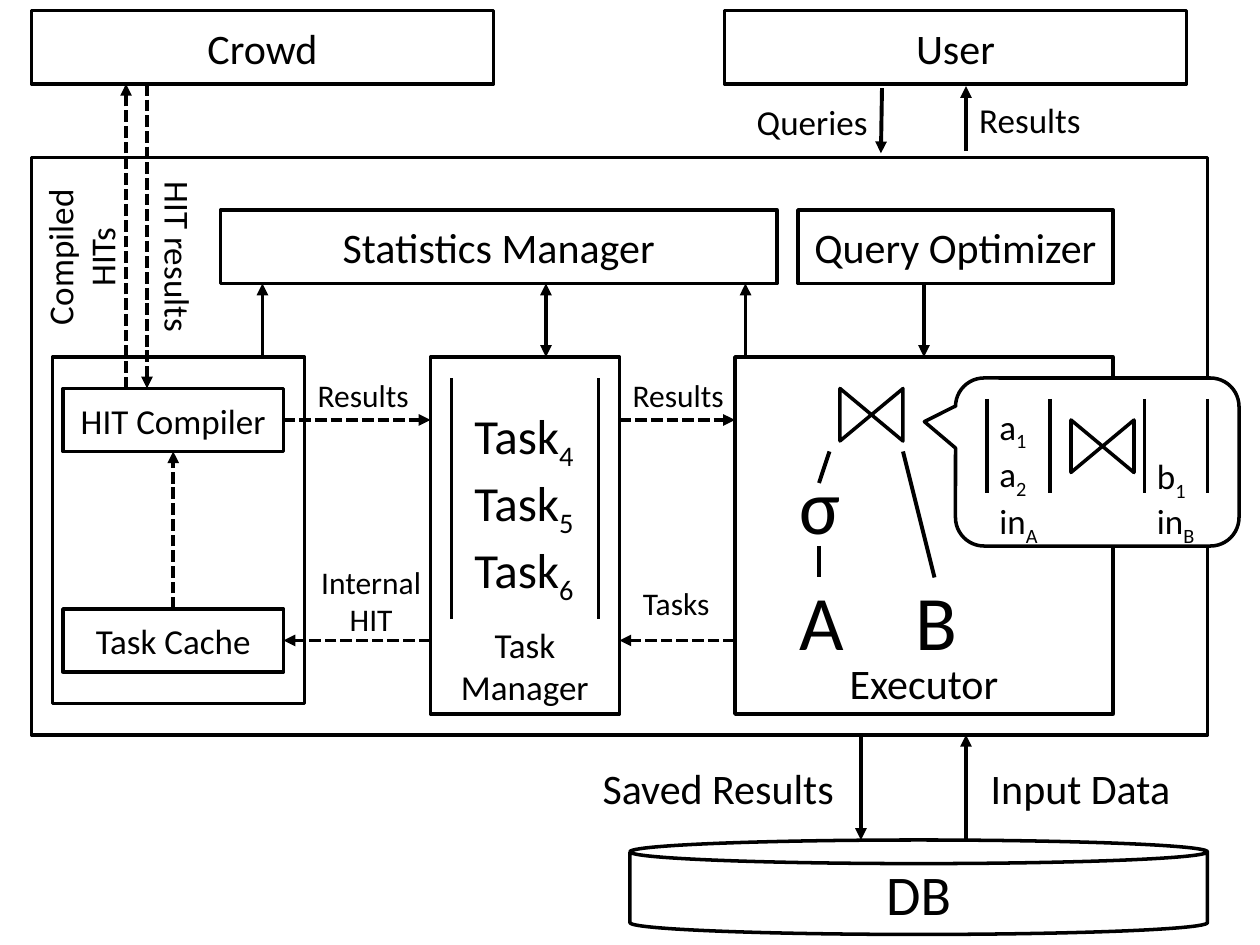
from typing import Any, NamedTuple

from pptx import Presentation
from pptx import util as u
from pptx.dml.color import RGBColor
from pptx.enum import dml, shapes, text
from pptx.oxml import ns, xmlchemy as xml

BLACK = RGBColor(0, 0, 0)
WHITE = RGBColor(255, 255, 255)
FONT = "Calibri"
UNIT = 2.54 / 12
KIND = shapes.MSO_SHAPE
MID = text.MSO_ANCHOR.MIDDLE
TOP = text.MSO_ANCHOR.TOP
LOW = text.MSO_ANCHOR.BOTTOM
LEFT = text.PP_ALIGN.LEFT
CENTER = text.PP_ALIGN.CENTER


class Box(NamedTuple):
    x: float
    y: float
    w: float
    h: float
    words: str = ""
    size: int = 24
    anchor: Any = MID
    kind: Any = KIND.RECTANGLE
    turn: int = 0


class Label(NamedTuple):
    x: float
    y: float
    w: float
    h: float
    words: str
    size: int = 20
    align: Any = CENTER
    wrap: bool = False
    anchor: Any = TOP
    turn: int = 0


class Line(NamedTuple):
    x: float
    y: float
    to_x: float
    to_y: float
    ends: tuple = ("tailEnd",)
    dash: bool = False


def grid(*steps: float) -> list:
    return [u.Cm(n * UNIT) for n in steps]


def apply(thing: Any, form: dict) -> None:
    for key, value in form.items():
        setattr(thing, key, value)


def write(frame: Any, words: str, size: int, align: Any) -> None:
    for i, row in enumerate(words.split("\n")):
        para = frame.paragraphs[0] if i == 0 else frame.add_paragraph()
        para.alignment = align
        for j, part in enumerate(row.split("_")):
            run = para.add_run()
            run.text = part
            apply(run.font, {"name": FONT, "size": u.Pt(size)})
            run.font.color.rgb = BLACK
            if j:
                run.font._element.set("baseline", "-25000")


def draw_box(slide: Any, box: Box) -> Any:
    shape = slide.shapes.add_shape(box.kind, *grid(box.x, box.y, box.w, box.h))
    shape.shadow.inherit = False
    shape.rotation = box.turn
    shape.fill.solid()
    shape.fill.fore_color.rgb = WHITE
    shape.line.color.rgb = BLACK
    shape.line.width = u.Pt(2)
    if box.words:
        apply(shape.text_frame, {"word_wrap": True, "vertical_anchor": box.anchor})
        write(shape.text_frame, box.words, box.size, CENTER)
    return shape


def draw_label(slide: Any, label: Label) -> None:
    shape = slide.shapes.add_textbox(*grid(label.x, label.y, label.w, label.h))
    shape.rotation = label.turn
    fit = text.MSO_AUTO_SIZE
    apply(shape.text_frame, {
        "word_wrap": label.wrap,
        "vertical_anchor": label.anchor,
        "auto_size": fit.NONE if label.anchor == MID else fit.SHAPE_TO_FIT_TEXT,
    })
    write(shape.text_frame, label.words, label.size, label.align)


def draw_line(slide: Any, line: Line) -> None:
    ends = grid(line.x, line.y, line.to_x, line.to_y)
    link = slide.shapes.add_connector(shapes.MSO_CONNECTOR.STRAIGHT, *ends)
    link.line.color.rgb = BLACK
    link.line.width = u.Pt(2.25)
    if line.dash:
        link.line.dash_style = dml.MSO_LINE.SQUARE_DOT
    props = link.element.spPr
    stroke = props.find(ns.qn("a:ln"))
    for end in line.ends:
        tip = xml.OxmlElement(f"a:{end}")
        tip.set("type", "triangle")
        stroke.append(tip)
    props.append(xml.OxmlElement("a:effectLst"))


def draw_join(slide: Any, x: float, y: float) -> None:
    for shift, turn in ((0, 90), (3, 270)):
        draw_box(slide, Box(x + shift, y, 5, 3, kind=KIND.ISOSCELES_TRIANGLE, turn=turn))


BOXES = [
    Box(3, 15, 112, 55),
    Box(5, 34, 24, 33),
    Box(3, 1, 44, 7, "Crowd"),
    Box(69, 1, 44, 7, "User"),
    Box(21, 20, 53, 7, "Statistics Manager"),
    Box(76, 20, 30, 7, "Query Optimizer"),
    Box(70, 34, 36, 34, "Executor", anchor=LOW),
    Box(41, 34, 18, 34, "Task Manager", 20, LOW),
    Box(6, 37, 21, 6, "HIT Compiler", 20),
    Box(6, 58, 21, 6, "Task Cache", 20),
    Box(60, 80, 55, 9, "DB", 32, kind=KIND.CAN),
]
CALLOUT = Box(91, 36, 27, 16, kind=KIND.ROUNDED_RECTANGULAR_CALLOUT)
JOINS = [(79, 38), (101, 41)]
BARS = [Line(x, top, x, low, ()) for x, top, low in (
    (43, 36, 59), (57, 36, 59), (94, 38, 47), (100, 38, 47),
    (109, 38, 47), (115, 38, 47), (78, 52, 55))]
LINKS = [
    Line(79, 43, 78, 46, ()),
    Line(86, 43, 89, 55, ()),
    Line(82, 70, 82, 80),
    Line(92, 80, 92, 70),
    Line(71, 34, 71, 27),
    Line(52, 34, 52, 27, ("headEnd", "tailEnd")),
    Line(25, 34, 25, 27),
    Line(88, 27, 88, 34),
    Line(84, 8.4, 83.9, 14.6),
    Line(92, 14.4, 92, 8.2),
]
DASHES = [Line(*ends, dash=True) for ends in (
    (70, 61, 59, 61), (41, 61, 27, 61), (27, 40, 41, 40), (59, 40, 70, 40),
    (12, 37, 12, 8), (14, 8, 14, 37), (16.5, 58, 16.5, 43))]
NODES = [Label(x, y, 6, 8, words, 44, wrap=True, anchor=MID)
         for x, y, words in ((75, 44, "σ"), (75, 55, "A"), (86, 55, "B"))]
LISTS = [Label(*spot, align=LEFT, wrap=True) for spot in (
    (44, 38, 14, 18.1, "Task_4\nTask_5\nTask_6", 28),
    (94, 38, 6, 9.2, "a_1\na_2"),
    (94, 47, 8, 5.3, "in_A"),
    (109, 47, 8, 5.3, "in_B"),
    (109, 42.7, 6, 5.3, "b_1"))]
NOTES = [
    Label(56, 72, 24.8, 6, "Saved Results", 24),
    Label(93, 72, 19.8, 6, "Input Data", 24),
    Label(-0.1, 19.9, 15.5, 9.2, "Compiled\nHITs", turn=270),
    Label(8.5, 21.8, 16.9, 5.3, "HIT results", turn=90),
    Label(29, 53, 12.7, 8.5, "Internal\nHIT", 18),
    Label(60, 55, 8.8, 4.8, "Tasks", 18),
    Label(29, 35.2, 11.2, 4.8, "Results", 18),
    Label(59, 35.2, 11.2, 4.8, "Results", 18),
    Label(92, 8.8, 12.2, 5.3, "Results"),
    Label(70.8, 9, 13.1, 5.3, "Queries"),
]


def main() -> None:
    deck = Presentation()
    apply(deck, {"slide_width": u.Cm(25.4), "slide_height": u.Cm(19.05)})
    slide = deck.slides.add_slide(deck.slide_layouts[6])
    for box in BOXES:
        draw_box(slide, box)
    bubble = draw_box(slide, CALLOUT)
    for i, value in enumerate((-0.61, -0.24, 0.17)):
        bubble.adjustments[i] = value
    for x, y in JOINS:
        draw_join(slide, x, y)
    for line in BARS + LINKS + DASHES:
        draw_line(slide, line)
    for label in NODES + LISTS + NOTES:
        draw_label(slide, label)
    deck.save("out.pptx")


if __name__ == "__main__":
    main()
